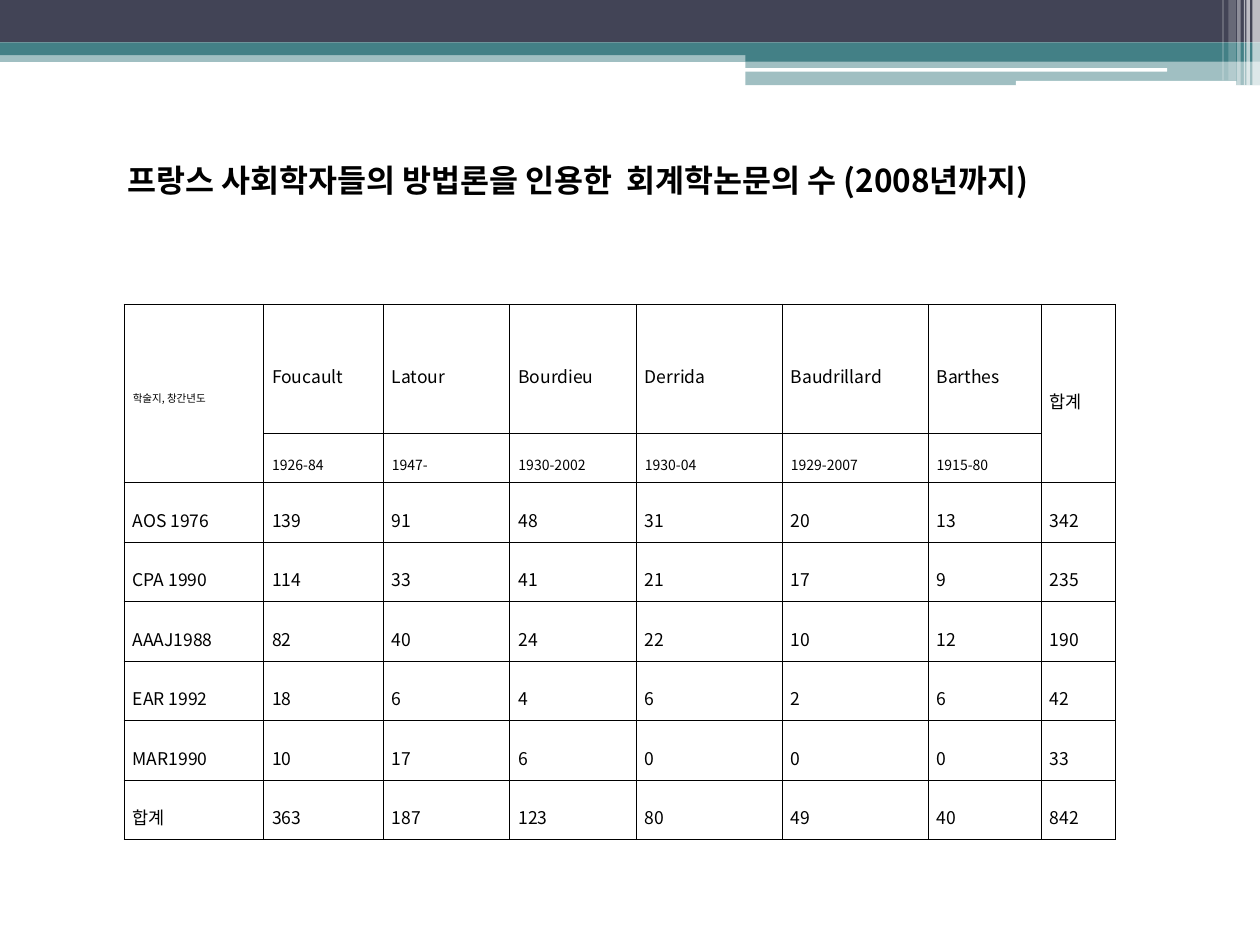
from lxml.etree import SubElement
from pptx import Presentation
from pptx.dml.color import RGBColor
from pptx.enum.shapes import MSO_SHAPE
from pptx.enum.text import MSO_ANCHOR, PP_ALIGN
from pptx.oxml.ns import qn
from pptx.util import Pt

BLACK = RGBColor(0, 0, 0)
WHITE = RGBColor(255, 255, 255)
NAVY = RGBColor(0x42, 0x44, 0x56)
TEAL = RGBColor(0x43, 0x80, 0x86)

# Header bars: left, top, width, height, colour, opacity in percent
BARS = [
    (0, 28.8, 720, 6.6, TEAL, 50),
    (0, 0, 720, 24.3, NAVY, 100),
    (0, 24.3, 720, 7.2, TEAL, 100),
    (426, 28.1, 294, 7.2, TEAL, 100),
    (426, 35.3, 294, 13.4, TEAL, 50),
]
# White rounded lines: left, top, width, height
LINES = [(425.5, 38.9, 241.5, 2), (580.5, 46.2, 126, 2.8)]
# Pale upright stripes: left, width, height, opacity in percent
STRIPES = [
    (715.7, 4.3, 48.8, 65),
    (712.2, 2, 48.8, 65),
    (710.8, 0.7, 48.8, 60),
    (707, 2, 48.8, 40),
    (702, 4.3, 46, 20),
    (698.5, 0.7, 46, 30),
]

COLS = [79.6, 68.4, 72.4, 72.2, 83.4, 83.4, 64.6, 42.6]
ROWS = [74, 28] + [34] * 6
SIZES = [10, 8] + [10] * 6
DATA = [
    ["학술지, 창간년도", "Foucault", "Latour", "Bourdieu", "Derrida",
     "Baudrillard", "Barthes", "합계"],
    ["", "1926-84", "1947-", "1930-2002", "1930-04", "1929-2007", "1915-80", ""],
    ["AOS 1976", 139, 91, 48, 31, 20, 13, 342],
    ["CPA 1990", 114, 33, 41, 21, 17, 9, 235],
    ["AAAJ1988", 82, 40, 24, 22, 10, 12, 190],
    ["EAR 1992", 18, 6, 4, 6, 2, 6, 42],
    ["MAR1990", 10, 17, 6, 0, 0, 0, 33],
    ["합계", 363, 187, 123, 80, 49, 40, 842],
]


class Deck:
    """Holds the style and the current slide."""

    face = "Noto Sans CJK KR"
    cell_form = {
        "margin_left": Pt(5.1), "margin_right": Pt(5.1),
        "margin_top": Pt(1.4), "margin_bottom": Pt(1.4),
        "vertical_anchor": MSO_ANCHOR.MIDDLE,
    }
    para_form = {"alignment": PP_ALIGN.JUSTIFY, "line_spacing": 1.6}

    def __init__(self, slide):
        self.slide = slide

    def apply(self, item, form):
        for name, value in form.items():
            setattr(item, name, value)

    def label(self, para, text, size, bold=False):
        run = para.add_run()
        run.text = str(text)
        self.apply(run.font, {"name": self.face, "size": Pt(size), "bold": bold})
        run.font.color.rgb = BLACK
        # East Asian letters take the same face
        SubElement(run.font._element, qn("a:ea"), typeface=self.face)

    def bar(self, left, top, width, height, color, alpha=100,
            kind=MSO_SHAPE.RECTANGLE):
        shape = self.slide.shapes.add_shape(
            kind, Pt(left), Pt(top), Pt(width), Pt(height))
        shape.shadow.inherit = False
        shape.fill.solid()
        shape.fill.fore_color.rgb = color
        shape.line.fill.background()
        if alpha < 100:
            tone = shape._element.spPr.find(".//" + qn("a:srgbClr"))
            SubElement(tone, qn("a:alpha"), val=str(alpha * 1000))

    def title(self, left, top, width, height, text, size):
        box = self.slide.shapes.add_textbox(
            Pt(left), Pt(top), Pt(width), Pt(height))
        frame = box.text_frame
        self.apply(frame, {"word_wrap": True,
                           "vertical_anchor": MSO_ANCHOR.MIDDLE})
        self.label(frame.paragraphs[0], text, size, True)

    def edge(self, cell):
        props = cell._tc.get_or_add_tcPr()
        for side in ("lnL", "lnR", "lnT", "lnB"):
            line = SubElement(props, qn("a:" + side), w=str(Pt(0.28)))
            fill = SubElement(line, qn("a:solidFill"))
            SubElement(fill, qn("a:srgbClr"), val=str(BLACK))

    def cell(self, cell, text, size):
        self.apply(cell, self.cell_form)
        self.edge(cell)
        cell.fill.background()
        if text != "":
            para = cell.text_frame.paragraphs[0]
            self.apply(para, self.para_form)
            self.label(para, text, size)

    def table(self, left, top):
        table = self.slide.shapes.add_table(
            len(ROWS), len(COLS), Pt(left), Pt(top),
            Pt(sum(COLS)), Pt(sum(ROWS))).table
        self.apply(table, {"first_row": False, "horz_banding": False})
        for col, width in zip(table.columns, COLS):
            col.width = Pt(width)
        for row, height in zip(table.rows, ROWS):
            row.height = Pt(height)
        # The first and last heads span both head rows
        for col in (0, len(COLS) - 1):
            table.cell(0, col).merge(table.cell(1, col))
        for r, line in enumerate(DATA):
            for c, text in enumerate(line):
                size = 6 if r == c == 0 else SIZES[r]
                self.cell(table.cell(r, c), text, size)


def main():
    prs = Presentation()
    prs.slide_width, prs.slide_height = Pt(720), Pt(540)
    deck = Deck(prs.slides.add_slide(prs.slide_layouts[6]))

    # Header band
    for bar in BARS:
        deck.bar(*bar)
    for line in LINES:
        deck.bar(*line, WHITE, kind=MSO_SHAPE.ROUNDED_RECTANGLE)
    for left, width, height, alpha in STRIPES:
        deck.bar(left, 0, width, height, WHITE, alpha)

    # Paper counts and title
    deck.table(70.8, 173.7)
    deck.title(65.5, 88.6, 572.4, 28.8,
               "프랑스 사회학자들의 방법론을 인용한  회계학논문의 수 (2008년까지)", 18)
    prs.save("out.pptx")


if __name__ == "__main__":
    main()
